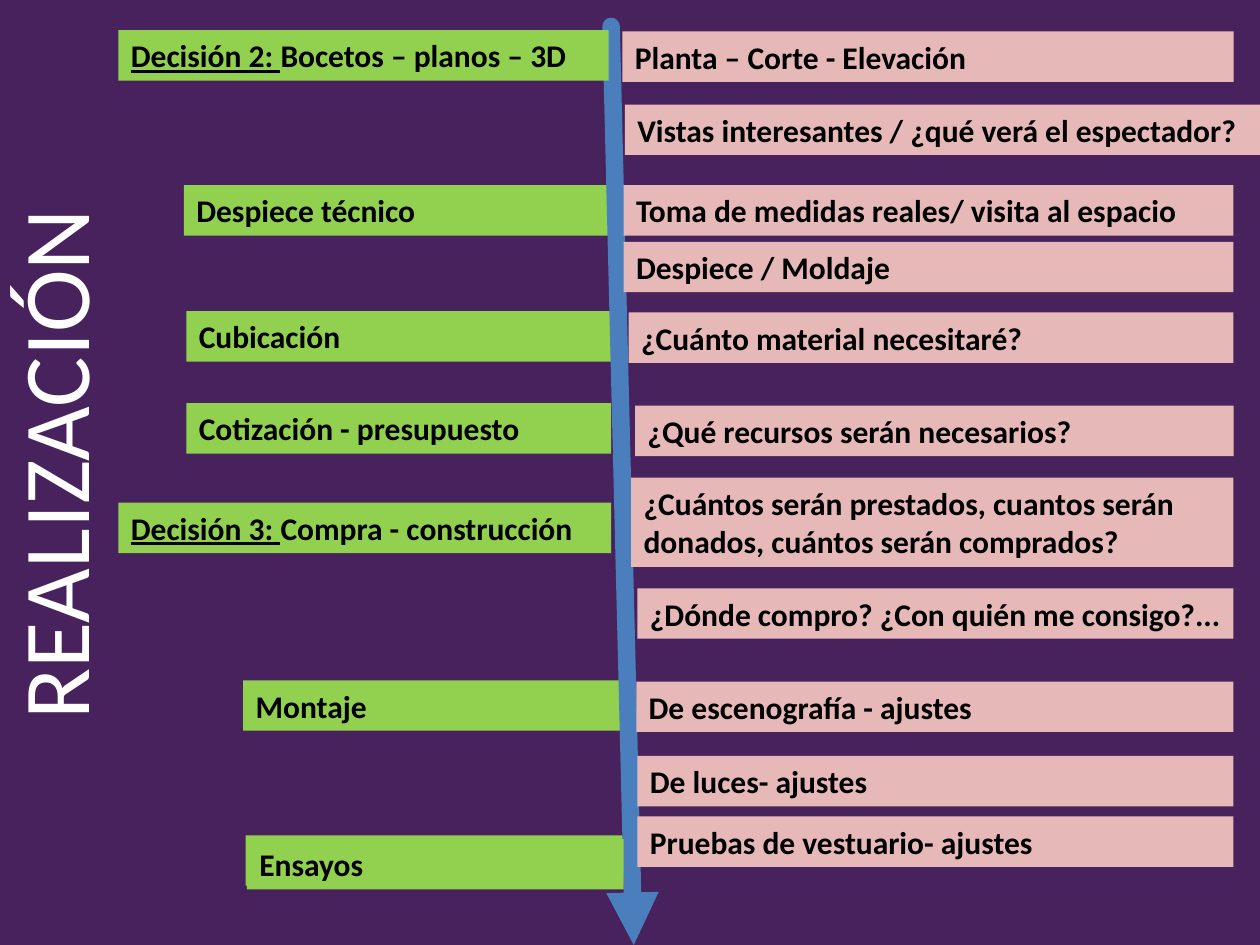
from lxml.etree import SubElement
from pptx import Presentation
from pptx.dml.color import RGBColor
from pptx.enum.shapes import MSO_CONNECTOR, MSO_SHAPE
from pptx.enum.text import MSO_ANCHOR, PP_ALIGN
from pptx.oxml.ns import qn
from pptx.util import Inches, Pt

COLORS = {"bg": "47225C", "stage": "92D050", "detail": "E6B9B8",
          "arrow": "4B7EBC", "text": "000000", "title": "FFFFFF"}
FONT = "Calibri"
ROW_H, LINE_H = 0.4, 0.31
DETAIL_RIGHT = 9.79

TITLE = "REALIZACIÓN"

# Stages: left, top, right, underlined lead, text
STAGES_BEHIND = [
    (1.46, 1.47, 4.83, "", "Despiece técnico"),
    (1.48, 2.47, 4.85, "", "Cubicación"),
    (1.48, 3.2, 4.85, "", "Cotización - presupuesto"),
    (0.94, 3.99, 4.85, "Decisión 3: ", "Compra - construcción"),
    (1.93, 5.4, 4.92, "", "Montaje"),
]
STAGES_FRONT = [
    (0.94, 0.24, 4.83, "Decisión 2: ", "Bocetos – planos – 3D"),
    (1.95, 6.63, 4.94, "", ""),
    (1.96, 6.66, 4.95, "", "Ensayos"),
]

# Details: left, top, number of lines, text
DETAILS = [
    (4.94, 0.25, 1, "Planta – Corte - Elevación"),
    (4.95, 1.47, 1, "Toma de medidas reales/ visita al espacio"),
    (4.95, 1.92, 1, "Despiece / Moldaje"),
    (4.99, 2.48, 1, "¿Cuánto material necesitaré?"),
    (5.04, 3.22, 1, "¿Qué recursos serán necesarios?"),
    (5.01, 3.79, 2, "¿Cuántos serán prestados, cuantos serán donados, "
                    "cuántos serán comprados?"),
    (5.06, 4.67, 1, "¿Dónde compro? ¿Con quién me consigo?..."),
    (5.05, 5.41, 1, "De escenografía - ajustes"),
    (5.06, 6, 1, "De luces- ajustes"),
    (5.06, 6.48, 1, "Pruebas de vestuario- ajustes"),
]
WIDE_DETAIL = (4.96, 0.83, 10, "Vistas interesantes / ¿qué verá el espectador?")


def rgb(name):
    return RGBColor.from_string(COLORS[name])


def add_run(p, text, size, color, bold=False, underline=False):
    r = p.add_run()
    r.text = text
    font = r.font
    font.name, font.size = FONT, Pt(size)
    font.bold, font.underline = bold, underline
    font.color.rgb = rgb(color)


def add_box(s, left, top, right, color, text, lead="", lines=1):
    height = ROW_H + (lines - 1) * LINE_H
    sp = s.shapes.add_shape(MSO_SHAPE.RECTANGLE, Inches(left), Inches(top),
                            Inches(right - left), Inches(height))
    sp.shadow.inherit = False
    sp.fill.solid()
    sp.fill.fore_color.rgb = rgb(color)
    sp.line.fill.background()
    tf = sp.text_frame
    tf.word_wrap = True
    tf.vertical_anchor = MSO_ANCHOR.TOP
    tf.margin_right = Inches(0.05)
    p = tf.paragraphs[0]
    p.alignment = PP_ALIGN.LEFT
    if lead:
        add_run(p, lead, 18, "text", bold=True, underline=True)
    if text:
        add_run(p, text, 18, "text", bold=True)


def add_stages(s, stages):
    for left, top, right, lead, text in stages:
        add_box(s, left, top, right, "stage", text, lead)


def add_timeline(s):
    line = s.shapes.add_connector(MSO_CONNECTOR.STRAIGHT, Inches(4.85),
                                  Inches(0.21), Inches(5.03), Inches(7.5))
    line.line.color.rgb = rgb("arrow")
    line.line.width = Pt(10)
    ln = line.line._get_or_add_ln()
    ln.set("cap", "rnd")
    SubElement(ln, qn("a:round"))
    SubElement(ln, qn("a:tailEnd"), type="triangle")
    SubElement(line._element.spPr, qn("a:effectLst"))


def add_title(s):
    sp = s.shapes.title
    sp.left, sp.top = Inches(-1.73), Inches(3.16)
    sp.width, sp.height = Inches(4.29), Inches(1.01)
    sp.rotation = 270
    tf = sp.text_frame
    tf.word_wrap = False
    tf.vertical_anchor = MSO_ANCHOR.TOP
    p = tf.paragraphs[0]
    p.alignment = PP_ALIGN.LEFT
    add_run(p, TITLE, 54, "title")


def main():
    prs = Presentation()
    prs.slide_width, prs.slide_height = Inches(10), Inches(7.5)
    s = prs.slides.add_slide(prs.slide_layouts[5])
    s.background.fill.solid()
    s.background.fill.fore_color.rgb = rgb("bg")

    add_title(s)

    # Stages behind the arrow, the arrow, then stages in front
    add_stages(s, STAGES_BEHIND)
    add_timeline(s)
    add_stages(s, STAGES_FRONT)

    # Details on the right
    for left, top, lines, text in DETAILS:
        add_box(s, left, top, DETAIL_RIGHT, "detail", text, lines=lines)
    left, top, right, text = WIDE_DETAIL
    add_box(s, left, top, right, "detail", text)

    prs.save("out.pptx")


if __name__ == "__main__":
    main()
